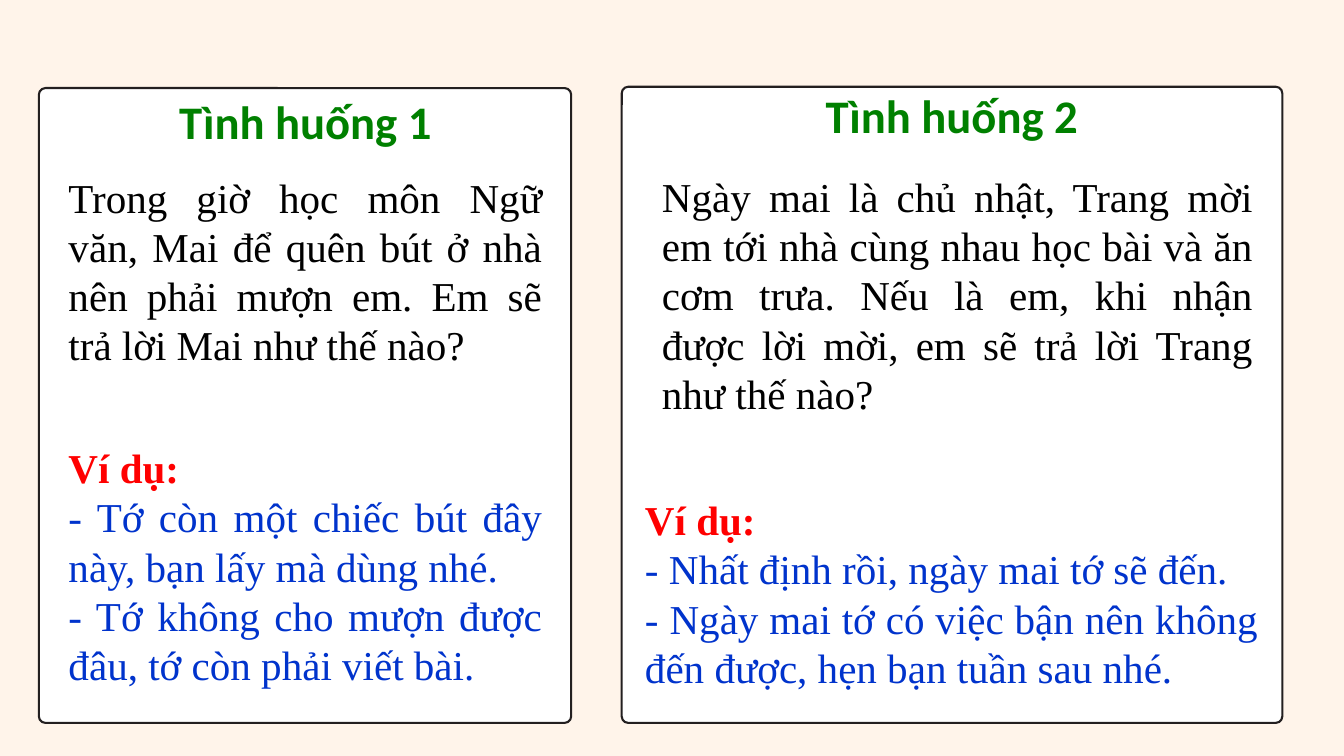
"""Build a slide with two classroom situations and sample replies."""
from pptx import Presentation
from pptx.dml.color import RGBColor
from pptx.enum import shapes, text
from pptx.util import Cm, Pt

BODY = "Times New Roman"
SITUATIONS = [
    {
        "card": (1.47, 3.33, 20.12, 24),
        "title": ("Tình huống 1", (2.34, 3.91, 18.42, 1.98)),
        "question": (
            "Trong giờ học môn Ngữ văn, Mai để quên bút ở nhà nên phải mượn em. "
            "Em sẽ trả lời Mai như thế nào?",
            (2.34, 6.38, 18.42, 7.77)),
        "replies": (
            ["- Tớ còn một chiếc bút đây này, bạn lấy mà dùng nhé.",
             "- Tớ không cho mượn được đâu, tớ còn phải viết bài."],
            (2.34, 16.61, 18.42, 9.65)),
    },
    {
        "card": (23.5, 3.28, 24.97, 24.05),
        "title": ("Tình huống 2", (26.77, 3.71, 18.42, 1.98)),
        "question": (
            "Ngày mai là chủ nhật, Trang mời em tới nhà cùng nhau học bài và ăn "
            "cơm trưa. Nếu là em, khi nhận được lời mời, em sẽ trả lời Trang "
            "như thế nào?",
            (24.77, 6.35, 22.86, 9.65)),
        "replies": (
            ["- Nhất định rồi, ngày mai tớ sẽ đến.",
             "- Ngày mai tớ có việc bận nên không đến được, hẹn bạn tuần sau nhé."],
            (24.13, 18.57, 23.7, 7.77)),
    },
]


def rgb(value):
    return RGBColor.from_string(value)


def add_card(s, box):
    sp = s.shapes.add_shape(shapes.MSO_SHAPE.ROUNDED_RECTANGLE, *map(Cm, box))
    sp.adjustments[0] = 0.25 / min(box[2:])
    sp.shadow.inherit = False
    sp.fill.solid()
    sp.fill.fore_color.rgb = rgb("FFFFFF")
    sp.line.color.rgb = rgb("231F20")
    sp.line.width = Pt(2.25)


def add_text(s, box, lines, align=text.PP_ALIGN.JUSTIFY, font=BODY, size=44,
             spacing=None):
    tf = s.shapes.add_textbox(*map(Cm, box)).text_frame
    tf.word_wrap = True
    tf.auto_size = text.MSO_AUTO_SIZE.SHAPE_TO_FIT_TEXT
    for i, (words, color, bold) in enumerate(lines):
        p = tf.add_paragraph() if i else tf.paragraphs[0]
        p.alignment = align
        if spacing:
            p.line_spacing = Pt(spacing)
        r = p.add_run()
        r.text = words
        r.font.name = font
        r.font.size = Pt(size)
        r.font.bold = bold
        r.font.color.rgb = rgb(color)


def main():
    prs = Presentation()
    prs.slide_width, prs.slide_height = Cm(50.8), Cm(28.58)
    s = prs.slides.add_slide(prs.slide_layouts[6])
    s.background.fill.solid()
    s.background.fill.fore_color.rgb = rgb("FFF4EA")
    for situation in SITUATIONS:
        add_card(s, situation["card"])
        title, box = situation["title"]
        add_text(s, box, [(title, "008000", True)], text.PP_ALIGN.CENTER,
                 "Calibri", 50, 44.8)
        question, box = situation["question"]
        add_text(s, box, [(question, "000000", False)])
        replies, box = situation["replies"]
        add_text(s, box, [("Ví dụ:", "FF0000", True)]
                 + [(reply, "0033CC", False) for reply in replies])
    prs.save("out.pptx")


if __name__ == "__main__":
    main()
